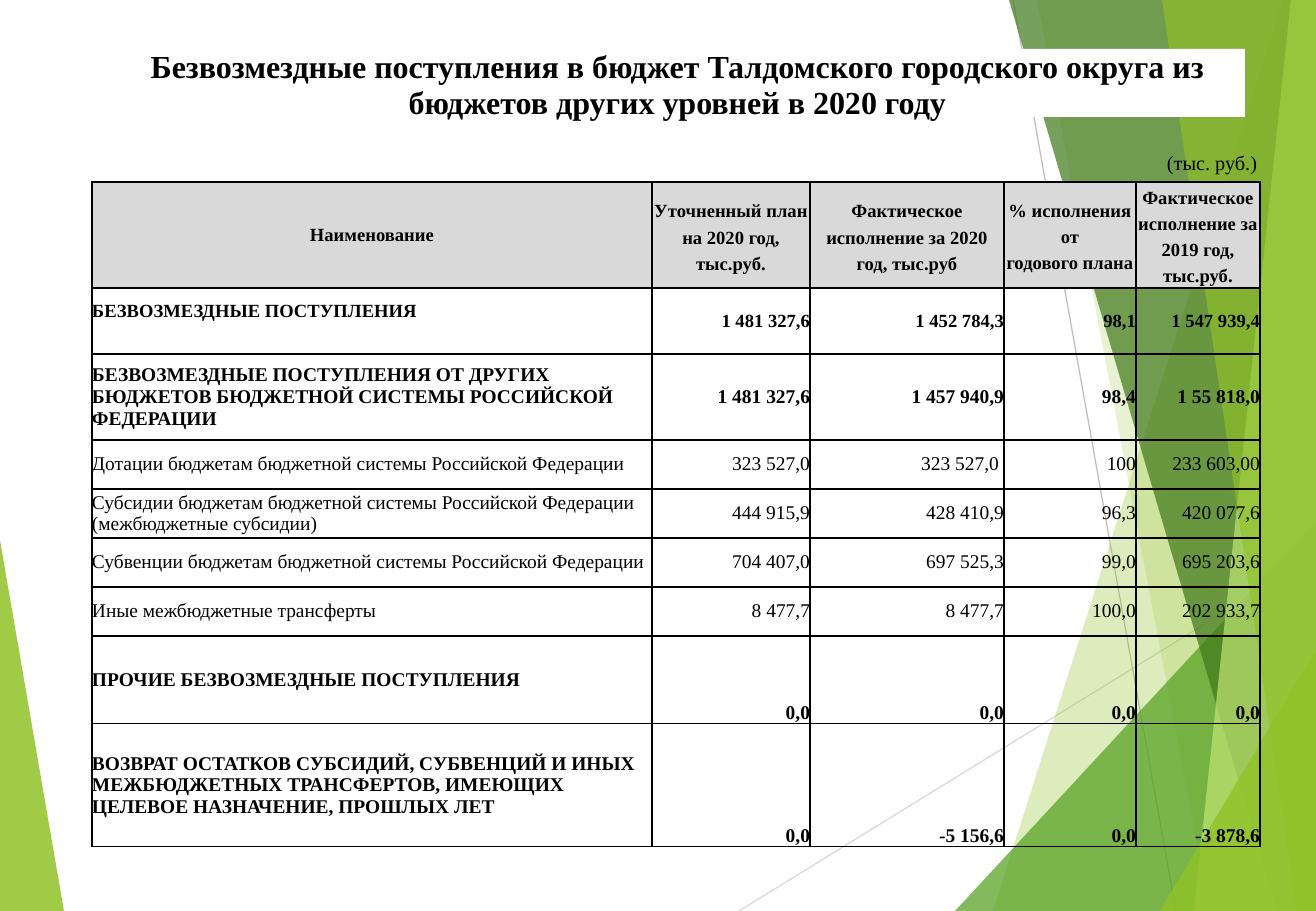
"""Build the slide on gratuitous receipts of the district budget."""
from lxml import etree
from pptx import Presentation
from pptx.dml.color import RGBColor
from pptx.enum.shapes import MSO_CONNECTOR, MSO_SHAPE
from pptx.enum.text import MSO_ANCHOR, PP_ALIGN
from pptx.oxml.ns import qn
from pptx.util import Pt

PX = 7526
WIDTH, HEIGHT = 1316, 911
FONT = "Times New Roman"
LEFT, CENTER, RIGHT = PP_ALIGN.LEFT, PP_ALIGN.CENTER, PP_ALIGN.RIGHT
TOP, MIDDLE, BOTTOM = MSO_ANCHOR.TOP, MSO_ANCHOR.MIDDLE, MSO_ANCHOR.BOTTOM
STRAIGHT, RECTANGLE = MSO_CONNECTOR.STRAIGHT, MSO_SHAPE.RECTANGLE

TITLE = ("Безвозмездные поступления в бюджет Талдомского городского округа "
         "из бюджетов других уровней в 2020 году")
UNIT = "(тыс. руб.)"

LEFT_FACET = ("90C226", 85, [(0, 540), (64, 911), (0, 911)])
RAYS = [("D9D9D9", (739, 911), (1317, 555)), ("BFBFBF", (1013, 0), (1176, 911))]
RIGHT_FACETS = [
    ("90C226", 30, [(1283, 0), (993, 911), (WIDTH, 911), (WIDTH, 0)]),
    ("90C226", 20, [(1037, 0), (1210, 911), (WIDTH, 911), (WIDTH, 0)]),
    ("54A021", 72, [(955, 911), (WIDTH, 521), (WIDTH, 911)]),
    ("3F7819", 70, [(1009, 0), (1277, 911), (WIDTH, 911), (WIDTH, 0)]),
    ("C0E474", 70, [(1291, 0), (1194, 911), (WIDTH, 911), (WIDTH, 0)]),
    ("90C226", 65, [(1162, 0), (1297, 911), (WIDTH, 911), (WIDTH, 0)]),
    ("90C226", 80, [(1160, 911), (WIDTH, 650), (WIDTH, 911)]),
]

TABLE_LEFT, TABLE_TOP = 92, 182
COLUMNS = [560, 158, 194, 132, 124]
HEADER_HEIGHT = 106
HEADERS = [
    ("Наименование", None),
    ("Уточненный план на 2020 год, тыс.руб.", 15.8),
    ("Фактическое исполнение за 2020 год, тыс.руб", 15.8),
    ("% исполнения от\nгодового плана", 15.4),
    ("Фактическое исполнение за 2019 год, тыс.руб.", 15.4),
]
ROWS = [
    (66, 11, True, MIDDLE, "БЕЗВОЗМЕЗДНЫЕ ПОСТУПЛЕНИЯ",
     "1 481 327,6", "1 452 784,3", "98,1", "1 547 939,4"),
    (86, 11.5, True, MIDDLE, "БЕЗВОЗМЕЗДНЫЕ ПОСТУПЛЕНИЯ ОТ ДРУГИХ БЮДЖЕТОВ "
     "БЮДЖЕТНОЙ СИСТЕМЫ РОССИЙСКОЙ ФЕДЕРАЦИИ",
     "1 481 327,6", "1 457 940,9", "98,4", "1 55 818,0"),
    (49, 11.5, False, MIDDLE, "Дотации бюджетам бюджетной системы Российской Федерации",
     "323 527,0", "323 527,0", "100", "233 603,00"),
    (49, 11.5, False, MIDDLE, "Субсидии бюджетам бюджетной системы Российской Федерации "
     "(межбюджетные субсидии)",
     "444 915,9", "428 410,9", "96,3", "420 077,6"),
    (49, 11.5, False, MIDDLE, "Субвенции бюджетам бюджетной системы Российской Федерации",
     "704 407,0", "697 525,3", "99,0", "695 203,6"),
    (49, 11.5, False, MIDDLE, "Иные межбюджетные трансферты",
     "8 477,7", "8 477,7", "100,0", "202 933,7"),
    (88, 11.5, True, BOTTOM, "ПРОЧИЕ БЕЗВОЗМЕЗДНЫЕ ПОСТУПЛЕНИЯ",
     "0,0", "0,0", "0,0", "0,0"),
    (123, 11.5, True, BOTTOM, "ВОЗВРАТ ОСТАТКОВ СУБСИДИЙ, СУБВЕНЦИЙ И ИНЫХ МЕЖБЮДЖЕТНЫХ "
     "ТРАНСФЕРТОВ, ИМЕЮЩИХ ЦЕЛЕВОЕ НАЗНАЧЕНИЕ, ПРОШЛЫХ ЛЕТ",
     "0,0", "-5 156,6", "0,0", "-3 878,6"),
]
EXTRA_INSETS = {(1, 0): (0, 20), (3, 2): (5, 0)}


def color(value):
    return RGBColor.from_string(value)


def write_text(frame, text, size=11, bold=False, align=LEFT, spacing=None):
    for index, line in enumerate(text.split("\n")):
        para = frame.add_paragraph() if index else frame.paragraphs[0]
        para.alignment = align
        if spacing:
            para.line_spacing = Pt(spacing)
        span = para.add_run()
        span.text = line
        span.font.name, span.font.size, span.font.bold = FONT, Pt(size), bold
        span.font.color.rgb = color("000000")


def clear_margins(target):
    target.margin_left = target.margin_right = 0
    target.margin_top = target.margin_bottom = 0


def add_facet(page, fill, opacity, points):
    builder = page.shapes.build_freeform(*points[0], scale=PX)
    builder.add_line_segments(points[1:], close=True)
    facet = builder.convert_to_shape()
    facet.shadow.inherit = False
    facet.fill.solid()
    facet.fill.fore_color.rgb = color(fill)
    facet.line.fill.background()
    tint = facet.element.spPr.find(".//" + qn("a:srgbClr"))
    etree.SubElement(tint, qn("a:alpha"), val=str(opacity * 1000))


def add_ray(page, stroke, start, end):
    ray = page.shapes.add_connector(STRAIGHT, *(value * PX for value in start + end))
    ray.line.color.rgb = color(stroke)
    ray.line.width = Pt(0.75)
    etree.SubElement(ray.element.spPr, qn("a:effectLst"))


def add_borders(cell):
    properties = cell._tc.get_or_add_tcPr()
    for side in ("lnL", "lnR", "lnT", "lnB"):
        border = etree.SubElement(properties, qn("a:" + side), w=str(Pt(1)))
        solid = etree.SubElement(border, qn("a:solidFill"))
        etree.SubElement(solid, qn("a:srgbClr"), val="000000")


def fill_cell(cell, text, anchor=MIDDLE, fill=None, insets=(0, 0), **text_format):
    clear_margins(cell)
    cell.margin_right, cell.margin_bottom = (inset * PX for inset in insets)
    cell.vertical_anchor = anchor
    add_borders(cell)
    if fill:
        cell.fill.solid()
        cell.fill.fore_color.rgb = color(fill)
    else:
        cell.fill.background()
    write_text(cell.text_frame, text, **text_format)


def add_budget_table(page):
    heights = [HEADER_HEIGHT] + [row[0] for row in ROWS]
    frame = page.shapes.add_table(
        len(heights), len(COLUMNS), TABLE_LEFT * PX, TABLE_TOP * PX,
        sum(COLUMNS) * PX, sum(heights) * PX)
    table = frame.table
    for column, width in zip(table.columns, COLUMNS):
        column.width = width * PX
    for row, height in zip(table.rows, heights):
        row.height = height * PX
    for index, (text, spacing) in enumerate(HEADERS):
        fill_cell(table.cell(0, index), text, fill="D9D9D9", bold=True,
                  align=CENTER, spacing=spacing)
    for number, (_, size, bold, anchor, *texts) in enumerate(ROWS, 1):
        for index, text in enumerate(texts):
            fill_cell(table.cell(number, index), text, size=size, bold=bold,
                      anchor=anchor if index else MIDDLE,
                      align=RIGHT if index else LEFT,
                      insets=EXTRA_INSETS.get((number, index), (0, 0)))


def main():
    deck = Presentation()
    deck.slide_width, deck.slide_height = WIDTH * PX, HEIGHT * PX
    page = deck.slides.add_slide(deck.slide_layouts[6])
    add_facet(page, *LEFT_FACET)
    for ray in RAYS:
        add_ray(page, *ray)
    for facet in RIGHT_FACETS:
        add_facet(page, *facet)

    title = page.shapes.add_shape(RECTANGLE, 110 * PX, 49 * PX, 1135 * PX, 68 * PX)
    title.shadow.inherit = False
    title.fill.solid()
    title.fill.fore_color.rgb = color("FFFFFF")
    title.line.fill.background()
    clear_margins(title.text_frame)
    title.text_frame.word_wrap = True
    title.text_frame.vertical_anchor = TOP
    write_text(title.text_frame, TITLE, size=19, bold=True, align=CENTER, spacing=21.4)

    unit = page.shapes.add_textbox(1167 * PX, 150 * PX, 94 * PX, 23 * PX)
    clear_margins(unit.text_frame)
    unit.text_frame.word_wrap = False
    write_text(unit.text_frame, UNIT, size=12)

    add_budget_table(page)
    deck.save("out.pptx")


if __name__ == "__main__":
    main()
